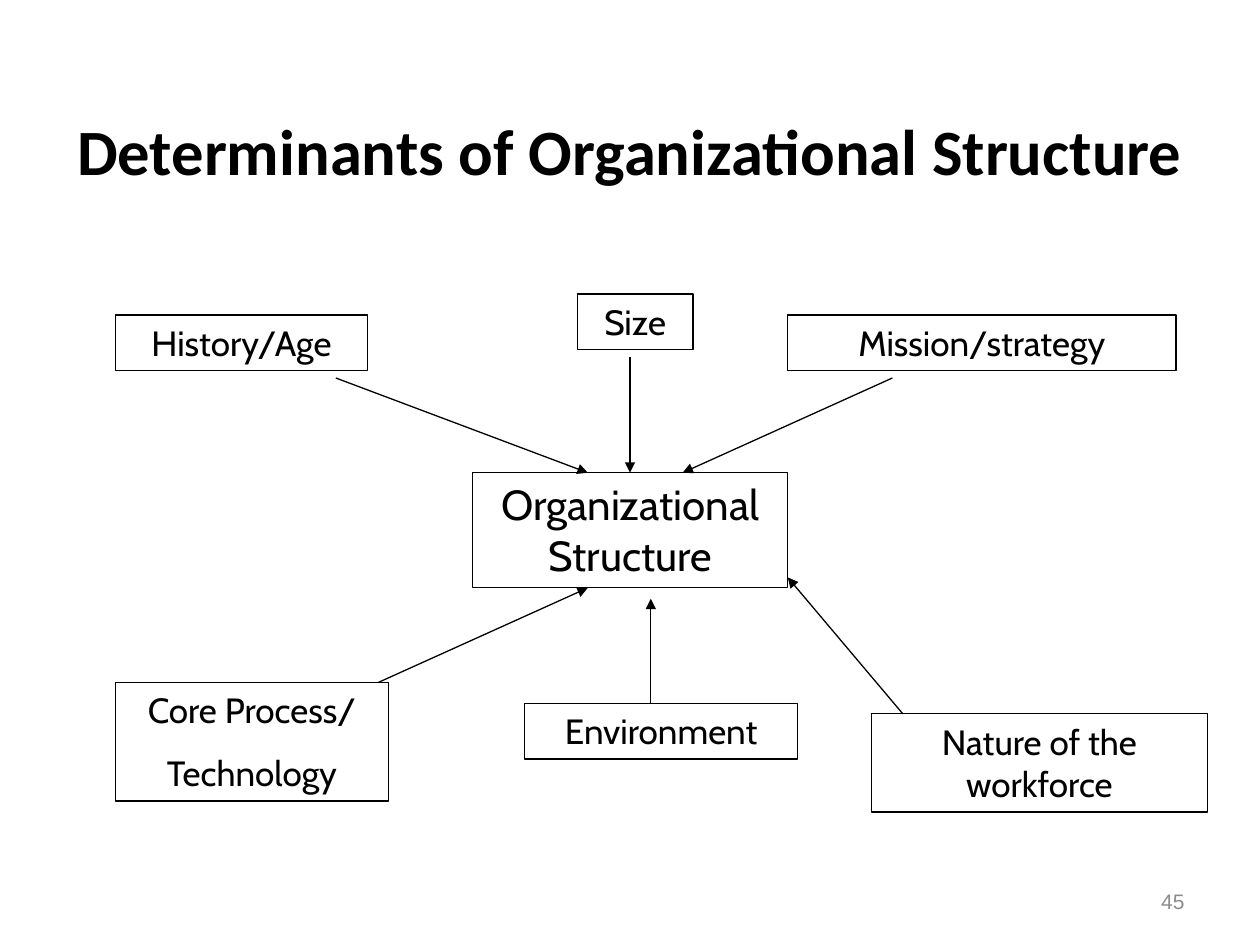
from pptx import Presentation
from pptx.dml.color import RGBColor
from pptx.enum.shapes import MSO_CONNECTOR, MSO_SHAPE
from pptx.enum.text import MSO_ANCHOR, PP_ALIGN
from pptx.oxml.ns import qn
from pptx.util import Cm, Pt
from lxml import etree

RECTANGLE = MSO_SHAPE.RECTANGLE
STRAIGHT = MSO_CONNECTOR.STRAIGHT
MIDDLE = MSO_ANCHOR.MIDDLE
TOP = MSO_ANCHOR.TOP
CENTER = PP_ALIGN.CENTER
RIGHT = PP_ALIGN.RIGHT
BLACK = "000000"
GRAY = "8C8C8C"


def color(value):
    return RGBColor.from_string(value)


def add_text(paragraph, text, font_name, size, text_color, alignment, bold=False):
    paragraph.alignment = alignment
    run = paragraph.add_run()
    run.text = text
    run.font.name = font_name
    run.font.size = Pt(size)
    run.font.bold = bold
    run.font.color.rgb = color(text_color)


presentation = Presentation()
presentation.slide_width = Cm(25.4)
presentation.slide_height = Cm(19.05)
slide = presentation.slides.add_slide(presentation.slide_layouts[5])

title = slide.shapes.title
title.left, title.top, title.width, title.height = Cm(1.27), Cm(2.11), Cm(22.86), Cm(1.83)
title_frame = title.text_frame
title_frame.vertical_anchor = MIDDLE
title_frame.margin_left = title_frame.margin_right = 0
add_text(title_frame.paragraphs[0], "Determinants of Organizational Structure",
         "Calibri", 36.9, BLACK, CENTER, bold=True)

page_number = slide.shapes.add_textbox(Cm(18.2), Cm(17.65), Cm(5.93), Cm(1.02))
page_number.text_frame.word_wrap = True
page_number.text_frame.vertical_anchor = MIDDLE
add_text(page_number.text_frame.paragraphs[0], "45", "Arial", 12, GRAY, RIGHT)

boxes = [
    (["Organizational Structure"], 24, 9.53, 9.53, 6.35, 2.31),
    (["History/Age"], 20, 2.33, 6.35, 5.08, 1.12),
    (["Size"], 20, 11.64, 5.93, 2.33, 1.12),
    (["Mission/strategy"], 20, 15.88, 6.35, 7.83, 1.12),
    (["Core Process/", "Technology"], 20, 2.33, 13.76, 5.5, 2.39),
    (["Environment"], 20, 10.58, 14.18, 5.5, 1.12),
    (["Nature of the workforce"], 20, 17.57, 14.39, 6.77, 1.98),
]
for lines, size, left, top, width, height in boxes:
    box = slide.shapes.add_shape(RECTANGLE, Cm(left), Cm(top), Cm(width), Cm(height))
    box.shadow.inherit = False
    box.fill.background()
    box.line.color.rgb = color(BLACK)
    box.line.width = Pt(0.75)
    text_frame = box.text_frame
    text_frame.word_wrap = True
    text_frame.vertical_anchor = TOP
    for index, line in enumerate(lines):
        if index == 0:
            paragraph = text_frame.paragraphs[0]
        else:
            paragraph = text_frame.add_paragraph()
            paragraph.space_before = Pt(size * 0.6)
        add_text(paragraph, line, "Cabin", size, BLACK, CENTER)

arrows = [
    (6.77, 7.62, 11.85, 9.53),
    (12.7, 7.2, 12.7, 9.53),
    (17.99, 7.62, 13.76, 9.53),
    (7.62, 13.76, 11.85, 11.85),
    (13.12, 14.18, 13.12, 12.07),
    (18.2, 14.39, 15.88, 11.64),
]
for start_x, start_y, end_x, end_y in arrows:
    arrow = slide.shapes.add_connector(
        STRAIGHT, Cm(start_x), Cm(start_y), Cm(end_x), Cm(end_y))
    arrow.line.color.rgb = color(BLACK)
    arrow.line.width = Pt(0.75)
    properties = arrow.element.spPr
    etree.SubElement(properties.find(qn("a:ln")), qn("a:tailEnd"), type="triangle")
    etree.SubElement(properties, qn("a:effectLst"))

presentation.save("out.pptx")
